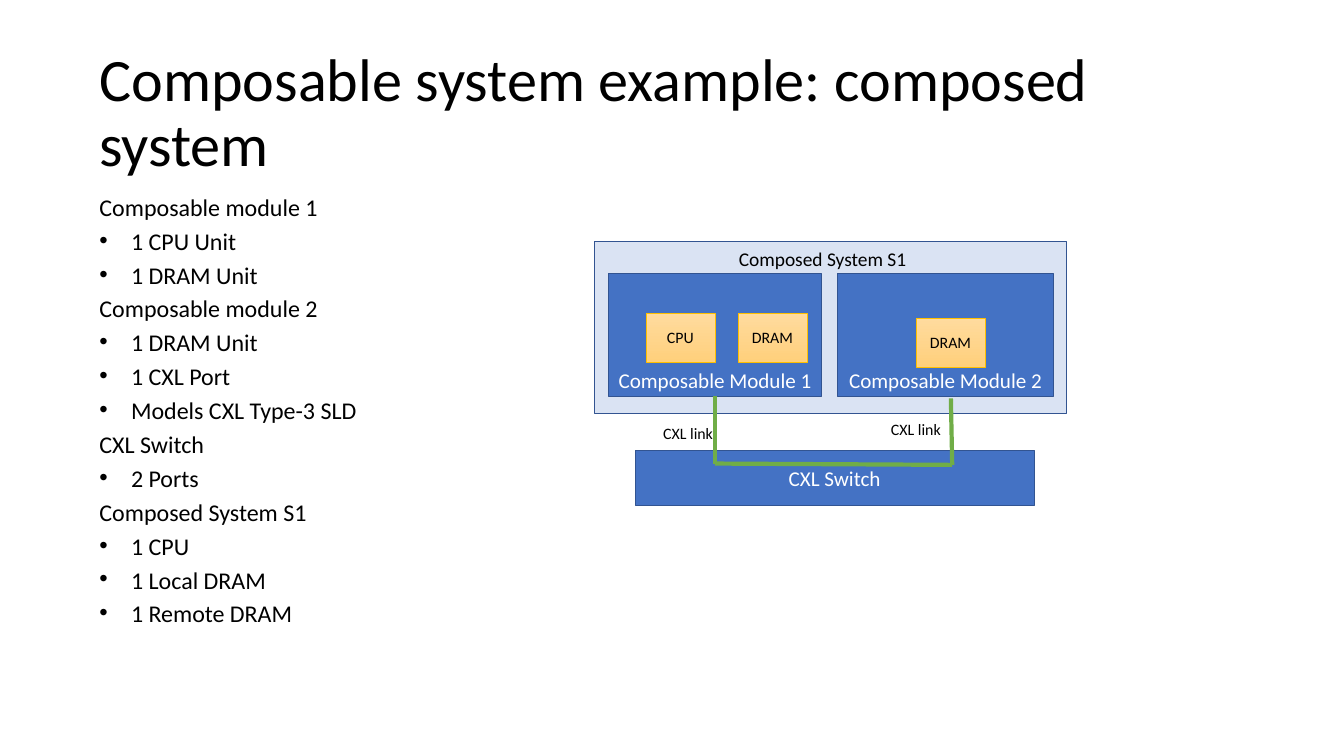
from lxml import etree
from pptx import Presentation
from pptx.dml.color import RGBColor
from pptx.enum.shapes import MSO_CONNECTOR as Connector, MSO_SHAPE as Shape
from pptx.enum.text import MSO_ANCHOR as Anchor, MSO_AUTO_SIZE as AutoSize, PP_ALIGN as Align
from pptx.oxml.ns import qn
from pptx.util import Inches, Pt

# Content
FONT = "Calibri"
BLACK, WHITE = "000000", "FFFFFF"
BLUE, PALE_BLUE, DARK_BLUE = "4472C4", "DAE3F3", "325491"
GREEN, GOLD = "70AD47", "FFC000"
UNIT_GRADIENT = ("FFDB9E", "FFD07C")

TITLE = "Composable system example: composed system"
SECTIONS = [
    ("Composable module 1", ["1 CPU Unit", "1 DRAM Unit"]),
    ("Composable module 2", ["1 DRAM Unit", "1 CXL Port", "Models CXL Type-3 SLD"]),
    ("CXL Switch", ["2 Ports"]),
    ("Composed System S1", ["1 CPU", "1 Local DRAM", "1 Remote DRAM"]),
]

# Boxes are (left, top, width, height) in inches
TITLE_BOX = (1.38, 0.59, 17.25, 2.23)
BODY_BOX = (1.38, 2.93, 17.25, 6.98)
SYSTEM_BOX = (8.85, 3.59, 7.02, 2.56)
SWITCH_BOX = (9.45, 6.7, 5.94, 0.82)
MODULES = [
    ("Composable Module 1", (9.06, 4.07, 3.16, 1.83)),
    ("Composable Module 2", (12.47, 4.07, 3.2, 1.83)),
]
UNITS = [("CPU", 9.61, 4.66), ("DRAM", 10.98, 4.66), ("DRAM", 13.63, 4.73)]
UNIT_SIZE = (1.03, 0.73)
LABELS = [
    ("CXL link", (9.77, 6.26, 1.82, 0.4), 17, Align.LEFT),
    ("CXL link", (13.16, 6.19, 1.82, 0.4), 17, Align.LEFT),
    ("Composed System S1", (10.31, 3.63, 3.86, 0.46), 20.8, Align.CENTER),
]
LINK_PATH = [(10.64, 5.9), (10.64, 6.9), (14.17, 6.92), (14.15, 5.93)]


def color(hex_string):
    return RGBColor.from_string(hex_string)


def inches(values):
    return [Inches(value) for value in values]


def format_paragraph(paragraph, size, font_color, align=Align.LEFT):
    paragraph.alignment = align
    for run in paragraph.runs:
        run.font.name = FONT
        run.font.size = Pt(size)
        run.font.color.rgb = color(font_color)


def place(shape, box):
    shape.left, shape.top, shape.width, shape.height = inches(box)


def set_bullet(paragraph, indent):
    properties = paragraph._p.get_or_add_pPr()
    properties.set("marL", str(Inches(indent)))
    properties.set("indent", str(-Inches(indent)))
    if indent:
        font = etree.SubElement(properties, qn("a:buFont"))
        font.set("typeface", "Arial")
        etree.SubElement(properties, qn("a:buChar")).set("char", "•")
    else:
        etree.SubElement(properties, qn("a:buNone"))


def add_box(slide, box, fill, line, line_width=1, text="", size=22.6,
            font_color=WHITE, anchor=Anchor.MIDDLE):
    shape = slide.shapes.add_shape(Shape.RECTANGLE, *inches(box))
    shape.shadow.inherit = False
    if isinstance(fill, tuple):
        shape.fill.gradient()
        shape.fill.gradient_angle = 270
        for stop, stop_color in zip(shape.fill.gradient_stops, fill):
            stop.color.rgb = color(stop_color)
        for stop, position in zip(shape.fill.gradient_stops, (0, 1)):
            stop.position = position
    else:
        shape.fill.solid()
        shape.fill.fore_color.rgb = color(fill)
    shape.line.color.rgb = color(line)
    shape.line.width = Pt(line_width)
    if text:
        shape.text_frame.text = text
        shape.text_frame.vertical_anchor = anchor
        format_paragraph(shape.text_frame.paragraphs[0], size, font_color, Align.CENTER)
    return shape


def add_label(slide, text, box, size, align):
    text_frame = slide.shapes.add_textbox(*inches(box)).text_frame
    text_frame.word_wrap = True
    text_frame.text = text
    format_paragraph(text_frame.paragraphs[0], size, BLACK, align)


def add_link(slide, start, end):
    link = slide.shapes.add_connector(Connector.STRAIGHT, *inches(start + end))
    link.line.color.rgb = color(GREEN)
    link.line.width = Pt(4.5)
    etree.SubElement(link._element.spPr, qn("a:effectLst"))
    return link


def fill_title(title):
    place(title, TITLE_BOX)
    title.text_frame.text = TITLE
    title.text_frame.auto_size = AutoSize.NONE
    title.text_frame.vertical_anchor = Anchor.MIDDLE
    paragraph = title.text_frame.paragraphs[0]
    paragraph.line_spacing = 0.9
    format_paragraph(paragraph, 64.5, BLACK)


def fill_body(body):
    place(body, BODY_BOX)
    lines = []
    for heading, items in SECTIONS:
        lines += [(heading, 0)] + [(item, 0.47) for item in items]
    text_frame = body.text_frame
    text_frame.text = "\n".join(text for text, indent in lines)
    text_frame.auto_size = AutoSize.NONE
    for paragraph, (text, indent) in zip(text_frame.paragraphs, lines):
        paragraph.line_spacing = 0.7
        paragraph.space_before = Pt(14.7)
        format_paragraph(paragraph, 25.7, BLACK)
        set_bullet(paragraph, indent)


def main():
    presentation = Presentation()
    presentation.slide_width, presentation.slide_height = inches((20, 11))
    slide = presentation.slides.add_slide(presentation.slide_layouts[1])

    # Title and list
    fill_title(slide.shapes.title)
    fill_body(slide.placeholders[1])

    # Composed system, modules, switch and units
    add_box(slide, SYSTEM_BOX, PALE_BLUE, DARK_BLUE)
    modules = [add_box(slide, box, BLUE, DARK_BLUE, text=name, anchor=Anchor.BOTTOM)
               for name, box in MODULES]
    add_box(slide, SWITCH_BOX, BLUE, DARK_BLUE, text="CXL Switch")
    for name, left, top in UNITS:
        add_box(slide, (left, top) + UNIT_SIZE, UNIT_GRADIENT, GOLD, 0.5, name, 17, BLACK)

    # Link from module 1 through the switch to module 2
    links = [add_link(slide, start, end) for start, end in zip(LINK_PATH, LINK_PATH[1:])]
    links[0].begin_connect(modules[0], 2)

    # Labels
    for label in LABELS:
        add_label(slide, *label)

    presentation.save("out.pptx")


if __name__ == "__main__":
    main()
